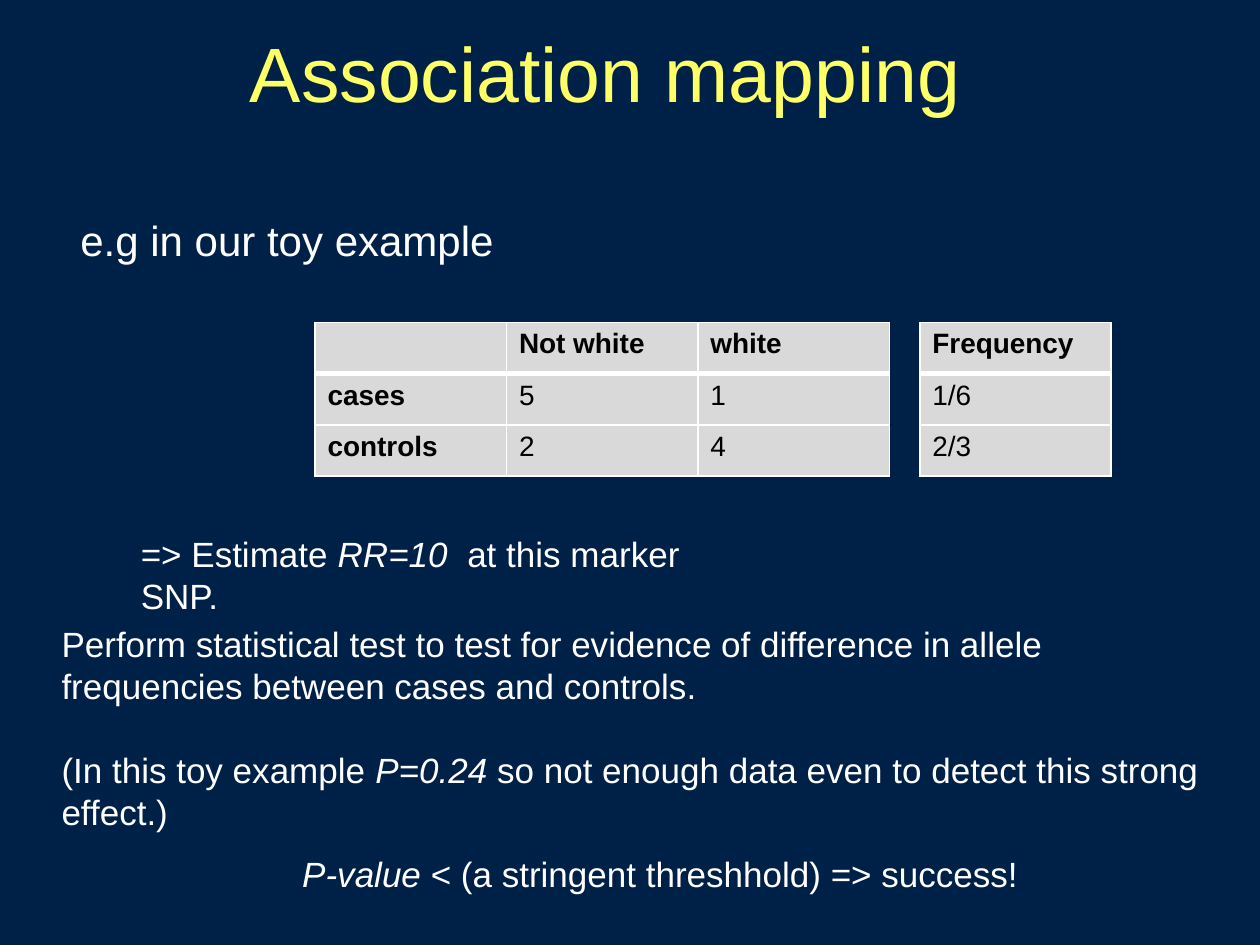
"""Build the association mapping slide."""
from lxml.etree import SubElement
from pptx import Presentation
from pptx.dml.color import RGBColor
from pptx.enum.text import MSO_ANCHOR as Anchor, PP_ALIGN as Align
from pptx.oxml.ns import qn
from pptx.util import Pt

NAVY = RGBColor(0x00, 0x21, 0x47)
YELLOW = RGBColor(0xFF, 0xFF, 0x66)
WHITE = RGBColor(0xFF, 0xFF, 0xFF)
BLACK = RGBColor(0x00, 0x00, 0x00)
GREY = RGBColor(0xD9, 0xD9, 0xD9)

TITLE = [[("Association mapping", False)]]
INTRO = [[("e.g in our toy example", False)]]
ESTIMATE = [[("=> Estimate ", False), ("RR=10 ", True), (" at this marker SNP.", False)]]
TESTING = [
    [("Perform statistical test to test for evidence of difference in allele "
      "frequencies between cases and controls.", False)],
    [("(In this toy example ", False), ("P=0.24", True),
     (" so not enough data even to detect this strong effect.)", False)],
]
SUCCESS = [[("P-value", True), (" < (a stringent threshhold) => success!", False)]]

COUNTS = [["", "Not white", "white"], ["cases", "5", "1"], ["controls", "2", "4"]]
FREQUENCIES = [["Frequency"], ["1/6"], ["2/3"]]

TABLE_TOP, COLUMN_WIDTH, ROW_HEIGHT = 184.2, 109.4, 29.3
THIN, THICK = 1, 3


def write_text(frame, paragraphs, size=20, color=WHITE, bold=False, align=Align.LEFT, gap=0):
    for index, spans in enumerate(paragraphs):
        para = frame.add_paragraph() if index else frame.paragraphs[0]
        para.alignment = align
        para.space_before = Pt(gap if index else 0)
        for words, italic in spans:
            span = para.add_run()
            span.text = words
            font = span.font
            font.name, font.size = "Arial", Pt(size)
            font.bold, font.italic = bold, italic
            font.color.rgb = color


def add_text(page, place, paragraphs, anchor=Anchor.TOP, **style):
    box = page.shapes.add_textbox(*map(Pt, place))
    frame = box.text_frame
    frame.word_wrap = True
    frame.vertical_anchor = anchor
    write_text(frame, paragraphs, **style)


def add_borders(cell, row):
    widths = {"L": THIN, "R": THIN,
              "T": THICK if row == 1 else THIN,
              "B": THICK if row == 0 else THIN}
    properties = cell._tc.get_or_add_tcPr()
    for side, width in widths.items():
        line = SubElement(properties, qn(f"a:ln{side}"), w=str(Pt(width)))
        fill = SubElement(line, qn("a:solidFill"))
        SubElement(fill, qn("a:srgbClr"), val=str(WHITE))


def add_grid(page, left, rows, label_column=False):
    columns = len(rows[0])
    place = (left, TABLE_TOP, columns * COLUMN_WIDTH, len(rows) * ROW_HEIGHT)
    table = page.shapes.add_table(len(rows), columns, *map(Pt, place)).table
    for row, values in enumerate(rows):
        for column, value in enumerate(values):
            cell = table.cell(row, column)
            add_borders(cell, row)
            cell.fill.solid()
            cell.fill.fore_color.rgb = GREY
            if value:
                bold = row == 0 or (label_column and column == 0)
                write_text(cell.text_frame, [[(value, False)]], size=16, color=BLACK, bold=bold)


def main():
    deck = Presentation()
    deck.slide_width, deck.slide_height = Pt(720), Pt(540)
    page = deck.slides.add_slide(deck.slide_layouts[6])
    page.background.fill.solid()
    page.background.fill.fore_color.rgb = NAVY

    add_text(page, (71.3, 19.4, 549.4, 51.8), TITLE, anchor=Anchor.BOTTOM,
             size=44, color=YELLOW, align=Align.CENTER)
    add_text(page, (38.9, 118.8, 260, 36), INTRO, size=24)
    add_grid(page, 180, COUNTS, label_column=True)
    add_text(page, (73.4, 301, 360, 31.7), ESTIMATE)
    add_text(page, (28.1, 352, 669.6, 128.2), TESTING, gap=24)
    add_grid(page, 525.6, FREQUENCIES)
    add_text(page, (165.6, 483.8, 428.4, 31.7), SUCCESS)
    deck.save("out.pptx")


if __name__ == "__main__":
    main()
